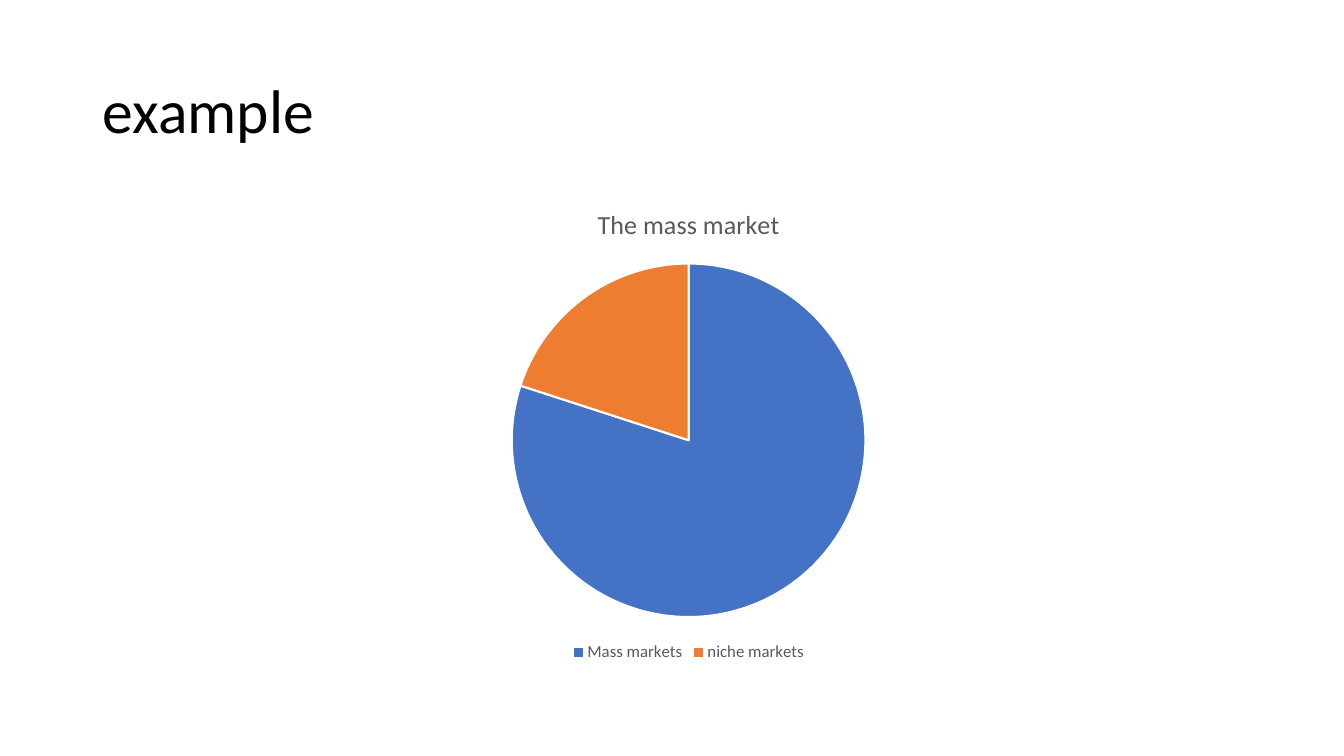
from pptx import Presentation
from pptx.chart.data import CategoryChartData
from pptx.dml.color import RGBColor
from pptx.enum.chart import XL_CHART_TYPE as ChartType, XL_LEGEND_POSITION as LegendPosition
from pptx.enum.text import MSO_ANCHOR as Anchor, PP_ALIGN as Align
from pptx.util import Inches, Pt

COLORS = {
    "text": "000000",
    "muted": "595959",
    "background": "FFFFFF",
    "mass": "4472C4",
    "niche": "ED7D31",
}


class SlideBuilder:
    """Holds the style and the current slide."""

    def __init__(self, presentation, font_name="Calibri"):
        self.font_name = font_name
        self.slide = presentation.slides.add_slide(presentation.slide_layouts[5])
        fill = self.slide.background.fill
        fill.solid()
        fill.fore_color.rgb = self.color("background")

    def color(self, name):
        return RGBColor.from_string(COLORS[name])

    def style_font(self, font, size, color):
        font.name = self.font_name
        font.size = Pt(size)
        font.bold = False
        font.color.rgb = self.color(color)

    def title(self, text, left, top, width, height):
        shape = self.slide.shapes.title
        shape.left, shape.top = Inches(left), Inches(top)
        shape.width, shape.height = Inches(width), Inches(height)
        text_frame = shape.text_frame
        text_frame.text = text
        text_frame.word_wrap = True
        text_frame.vertical_anchor = Anchor.MIDDLE
        paragraph = text_frame.paragraphs[0]
        paragraph.alignment = Align.LEFT
        paragraph.line_spacing = 0.9
        self.style_font(paragraph.runs[0].font, 44, "text")

    def pie_chart(self, title, slices, left, top, width, height):
        data = CategoryChartData()
        data.categories = [name for name, value, color in slices]
        data.add_series("Series 1", [value for name, value, color in slices])
        chart = self.slide.shapes.add_chart(
            ChartType.PIE, Inches(left), Inches(top), Inches(width), Inches(height), data
        ).chart
        self.style_font(chart.font, 10, "text")

        # Chart title
        chart.has_title = True
        title_frame = chart.chart_title.text_frame
        title_frame.text = title
        self.style_font(title_frame.paragraphs[0].runs[0].font, 18.6, "muted")
        chart.chart_title.include_in_layout = False

        # Legend
        chart.has_legend = True
        chart.legend.position = LegendPosition.BOTTOM
        chart.legend.include_in_layout = False
        self.style_font(chart.legend.font, 12, "muted")

        # Slices
        plot = chart.plots[0]
        plot.vary_by_categories = True
        for index, (name, value, color) in enumerate(slices):
            point_format = plot.series[0].points[index].format
            point_format.fill.solid()
            point_format.fill.fore_color.rgb = self.color(color)
            point_format.line.color.rgb = self.color("background")
            point_format.line.width = Pt(1.5)


def main():
    presentation = Presentation()
    presentation.slide_width, presentation.slide_height = Inches(13.33), Inches(7.5)

    builder = SlideBuilder(presentation)
    builder.title("example", 0.92, 0.4, 11.5, 1.45)
    builder.pie_chart(
        "The mass market",
        [("Mass markets", 80, "mass"), ("niche markets", 20, "niche")],
        1.08, 1.85, 11.5, 4.76,
    )
    presentation.save("out.pptx")


if __name__ == "__main__":
    main()
